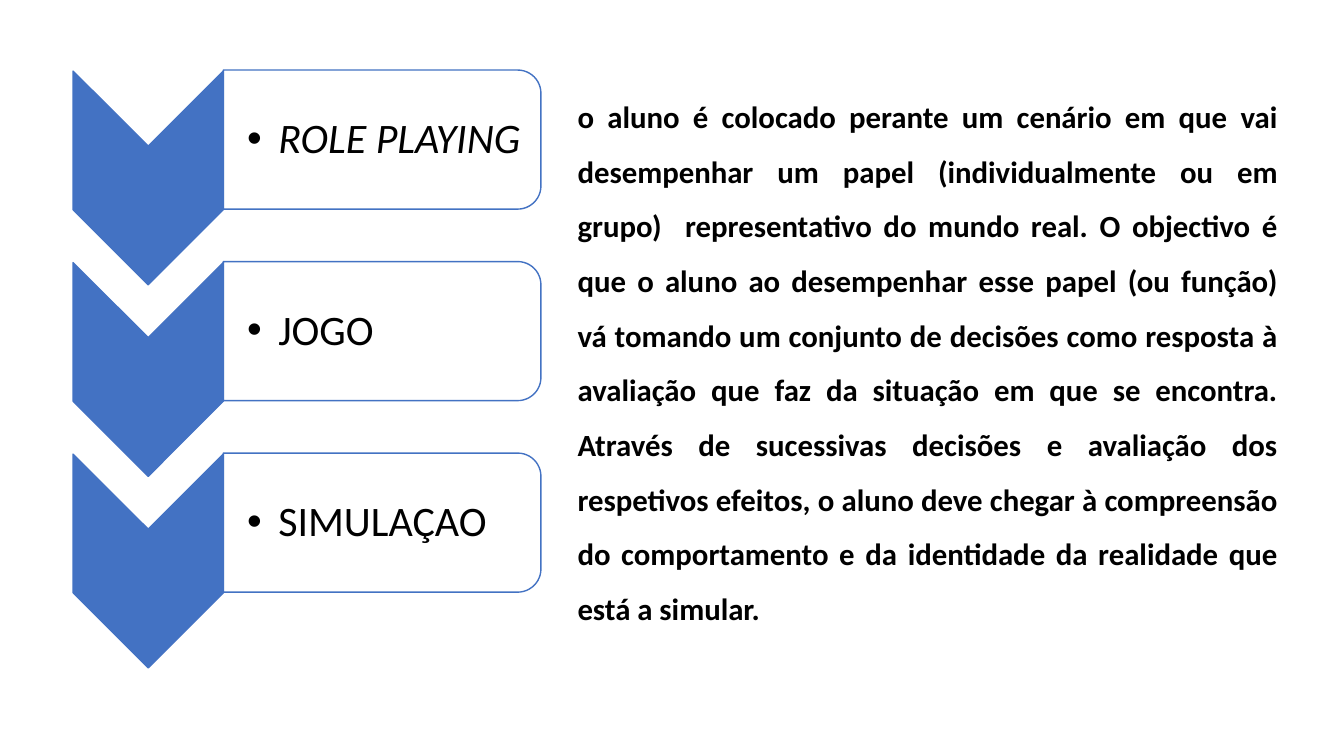
from lxml import etree
from pptx import Presentation
from pptx import util as u
from pptx.dml.color import RGBColor
from pptx.enum import shapes, text
from pptx.oxml.ns import qn

BLUE = RGBColor(0x43, 0x72, 0xC3)
WHITE = RGBColor(0xFF, 0xFF, 0xFF)
BLACK = RGBColor(0, 0, 0)
PX = 9144
ROW_PITCH = 190
METHODS = [("ROLE PLAYING", True), ("JOGO", False), ("SIMULAÇAO", False)]
BODY = (
    "o aluno é colocado perante um cenário em que vai desempenhar um papel "
    "(individualmente ou em grupo)  representativo do mundo real. O objectivo é "
    "que o aluno ao desempenhar esse papel (ou função) vá tomando um conjunto de "
    "decisões como resposta à avaliação que faz da situação em que se encontra. "
    "Através de sucessivas decisões e avaliação dos respetivos efeitos, o aluno "
    "deve chegar à compreensão do comportamento e da identidade da realidade que "
    "está a simular."
)


class Deck:
    """Hold the style and the current slide, and draw its elements."""

    def __init__(self):
        self.prs = Presentation()
        self.prs.slide_width = u.Emu(1333 * PX)
        self.prs.slide_height = u.Emu(750 * PX)
        self.slide = self.prs.slides.add_slide(self.prs.slide_layouts[6])
        self.font = "Calibri"

    def shape(self, kind, box, adjustments, fill, alpha=None):
        sp = self.slide.shapes.add_shape(kind, *(u.Emu(v * PX) for v in box))
        sp.rotation = 90
        sp.shadow.inherit = False
        for i, value in enumerate(adjustments):
            sp.adjustments[i] = value
        sp.fill.solid()
        sp.fill.fore_color.rgb = fill
        if alpha is not None:
            color = sp.fill._xPr.find(qn("a:solidFill"))[0]
            etree.SubElement(color, qn("a:alpha")).set("val", str(alpha * 1000))
        sp.line.color.rgb = BLUE
        sp.line.width = u.Pt(1)

    def text(self, box, insets, content, size, spacing, bold=False, italic=False):
        sp = self.slide.shapes.add_textbox(*(u.Emu(v * PX) for v in box))
        tf = sp.text_frame
        tf.word_wrap = True
        tf.vertical_anchor = text.MSO_ANCHOR.MIDDLE
        tf.margin_left, tf.margin_top, tf.margin_right, tf.margin_bottom = (
            u.Emu(v * PX) for v in insets)
        p = tf.paragraphs[0]
        p.text = content
        p.line_spacing = spacing
        for r in p.runs:
            r.font.name = self.font
            r.font.size = u.Pt(size)
            r.font.bold = bold
            r.font.italic = italic
            r.font.color.rgb = BLACK
        return p

    def bullet(self, p, indent):
        pPr = p._p.get_or_add_pPr()
        pPr.set("marL", str(indent * PX))
        pPr.set("indent", str(-indent * PX))
        etree.SubElement(pPr, qn("a:buFont")).set("typeface", "Arial")
        etree.SubElement(pPr, qn("a:buChar")).set("char", "•")

    def method_row(self, y, label, italic):
        self.shape(shapes.MSO_SHAPE.CHEVRON, (41, y + 102, 212, 149), [0.5], BLUE)
        self.shape(shapes.MSO_SHAPE.ROUND_2_SAME_RECTANGLE,
                   (310, y - 19, 138, 315), [0.167, 0], WHITE, alpha=90)
        p = self.text((222, y + 77, 308, 124), (23, 2, 2, 2), label, 30, 0.9,
                      italic=italic)
        self.bullet(p, 31)


def main():
    deck = Deck()
    p = deck.text((563, 87, 714, 576), (10, 5, 10, 54), BODY, 22, 1.48, bold=True)
    p.alignment = text.PP_ALIGN.JUSTIFY
    for i, (label, italic) in enumerate(METHODS):
        deck.method_row(i * ROW_PITCH, label, italic)
    deck.prs.save("out.pptx")


if __name__ == "__main__":
    main()
